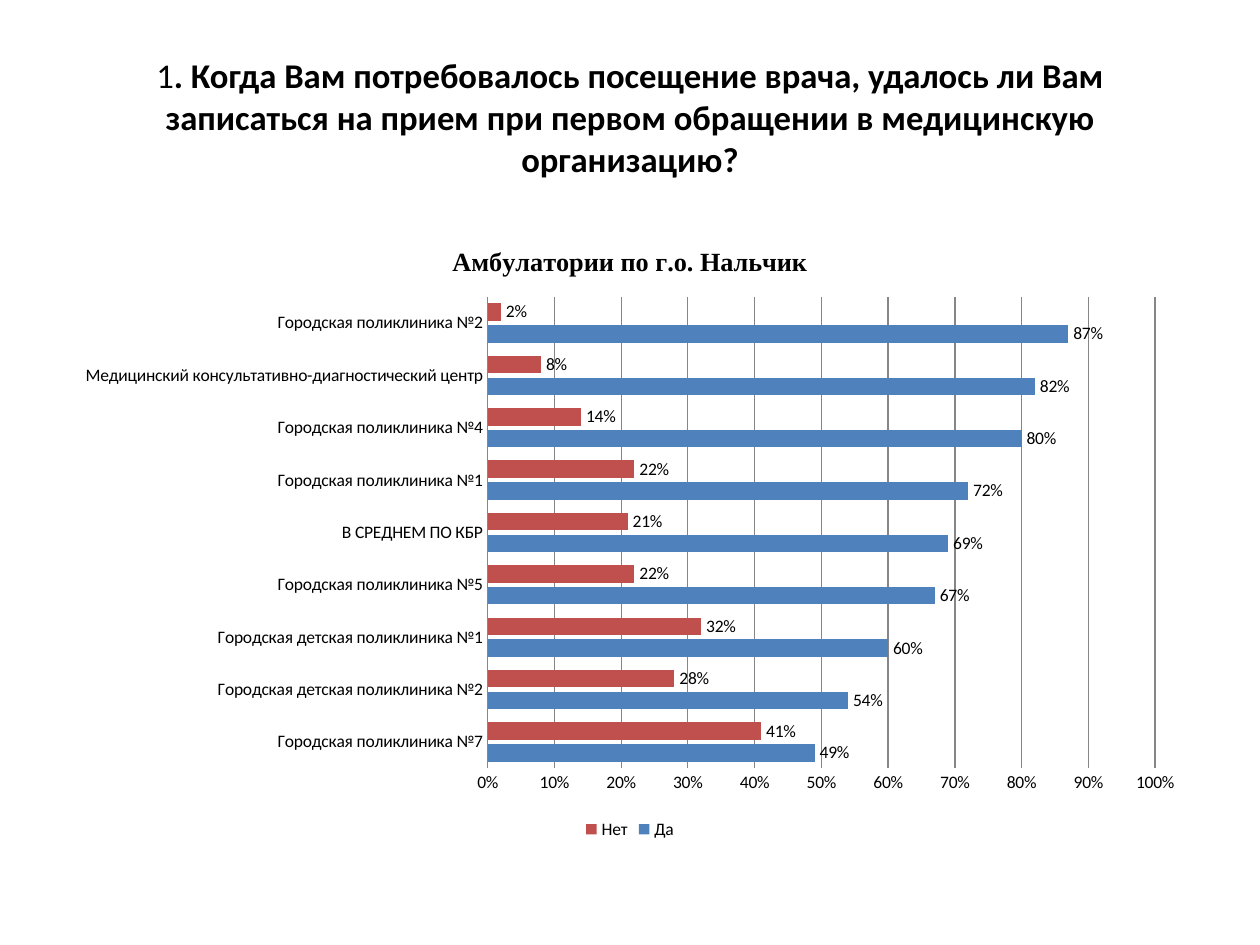
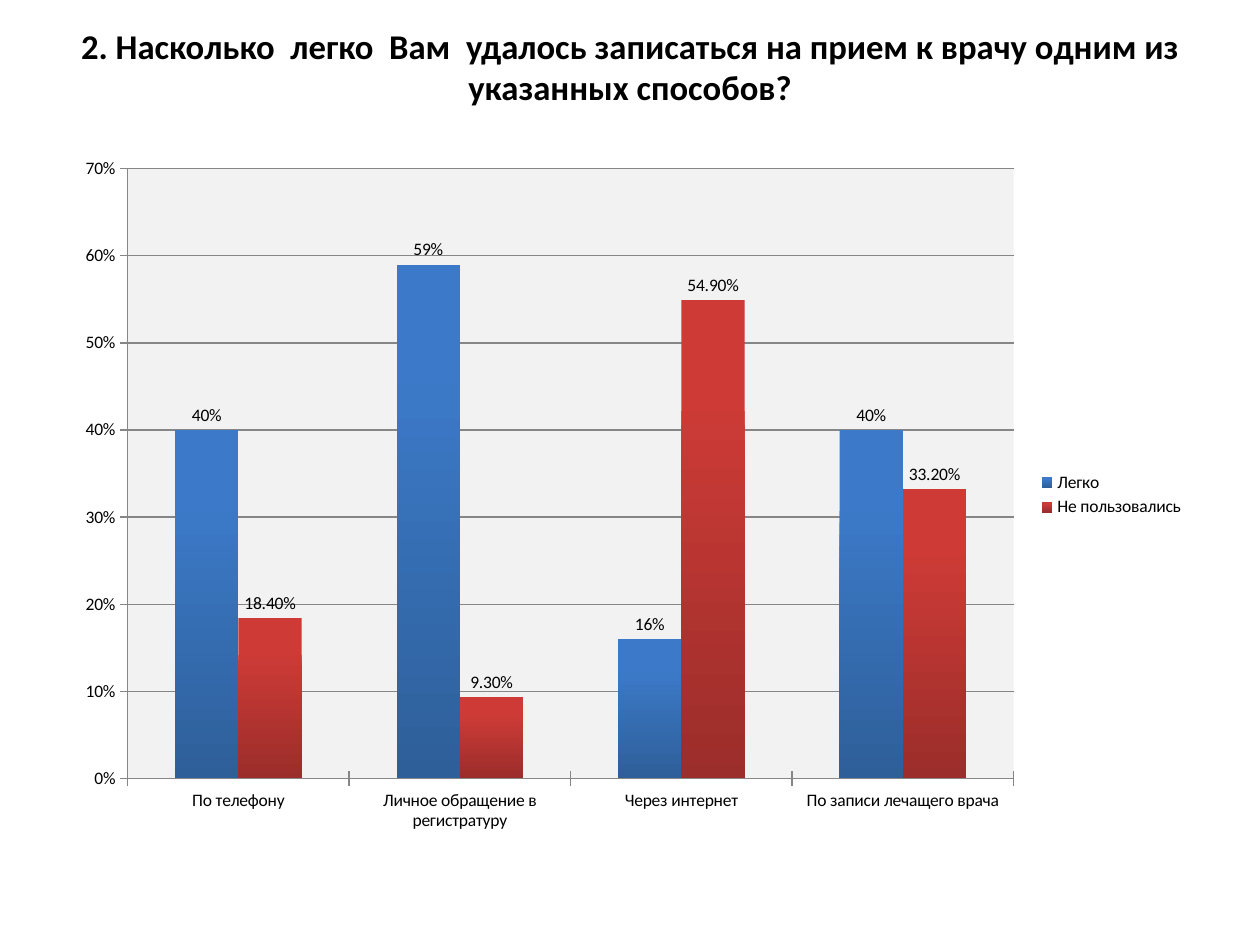
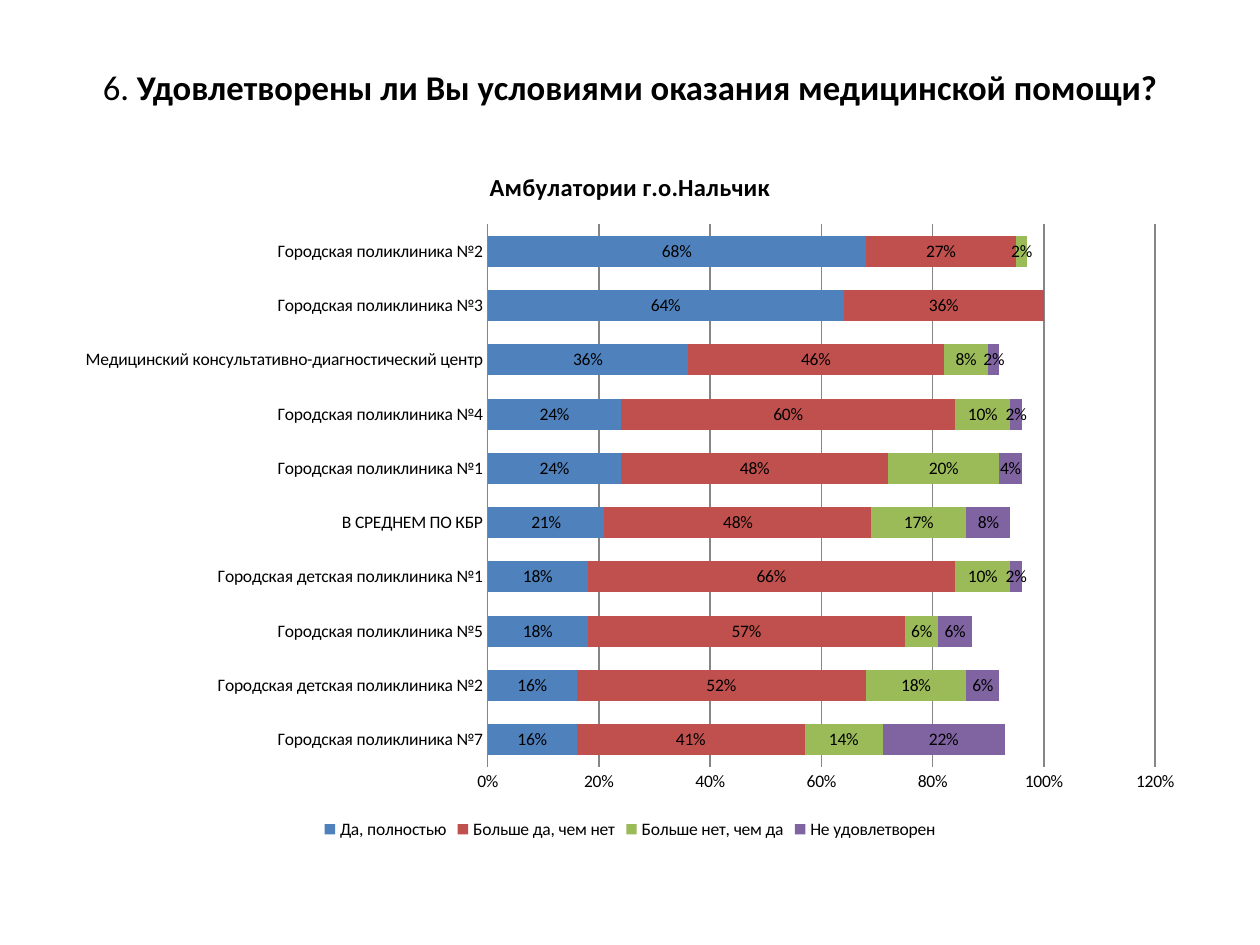
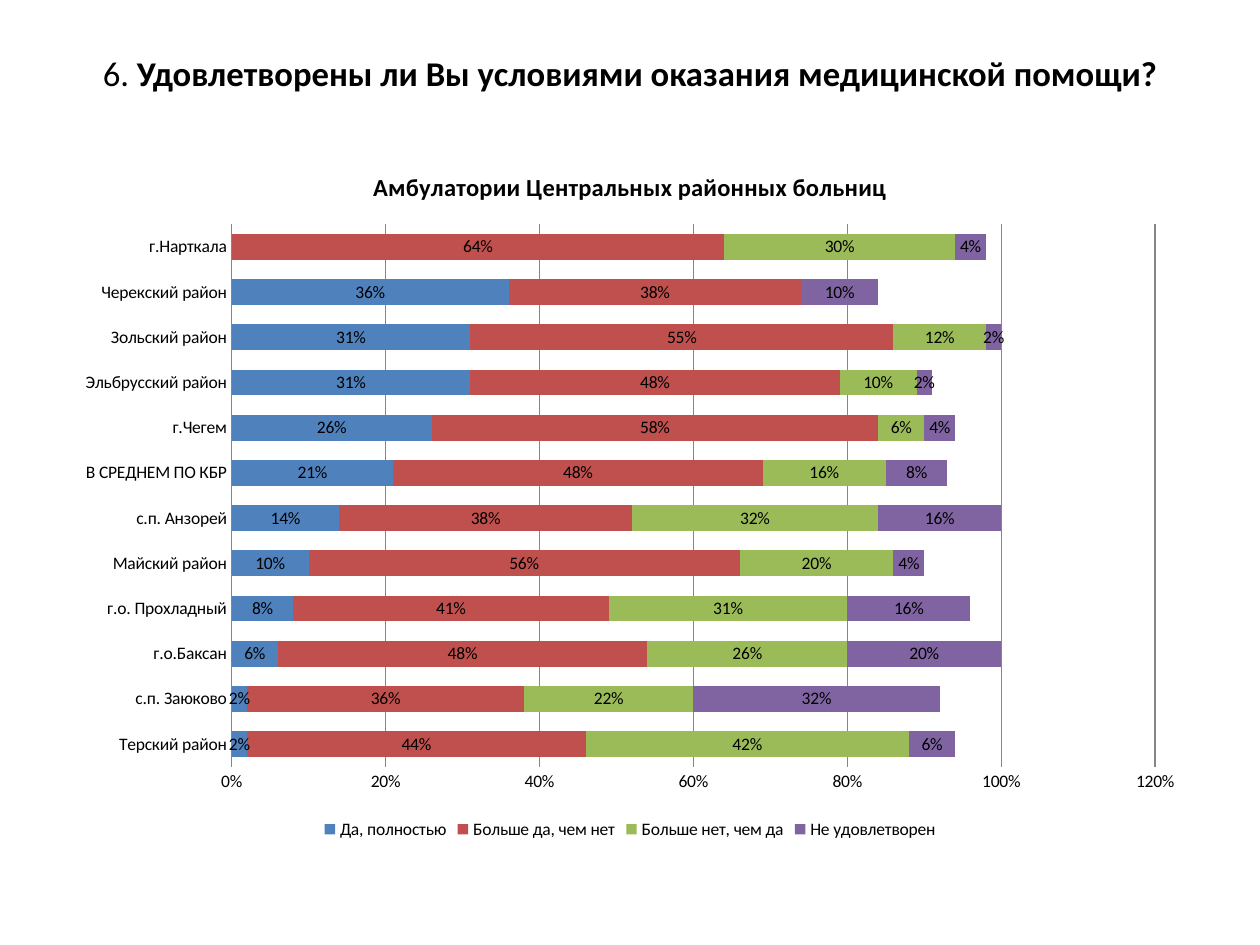
import dataclasses

import pptx
import pptx.chart.data
import pptx.dml.color
import pptx.enum.chart
import pptx.enum.text
import pptx.util

PX = 9144
TITLE_ONLY = 5
ChartType = pptx.enum.chart.XL_CHART_TYPE
LabelPlace = pptx.enum.chart.XL_LABEL_POSITION
LegendPlace = pptx.enum.chart.XL_LEGEND_POSITION
Tick = pptx.enum.chart.XL_TICK_MARK


@dataclasses.dataclass(frozen=True)
class Theme:
    font: str = "Calibri"
    serif: str = "Times New Roman"
    title_size: float = 19.8
    chart_size: float = 10
    heading_size: float = 14
    large_heading_size: float = 15
    text: str = "000000"
    background: str = "FFFFFF"
    rule: str = "868686"
    plot_fill: str = "F2F2F2"
    series: tuple = ("4F81BD", "C0504D", "9BBB59", "8064A2")
    gradients: tuple = (("3C7AC9", "2E5F99"), ("CE3B37", "9B2D2A"))


THEME = Theme()
AVERAGE = "В СРЕДНЕМ ПО КБР"
CENTRE = "Медицинский консультативно-диагностический центр"
CONDITIONS = [("6. ", False),
              ("Удовлетворены ли Вы условиями оказания медицинской помощи?", True)]
ANSWERS = ("Да, полностью", "Больше да, чем нет", "Больше нет, чем да", "Не удовлетворен")


def clinic(number):
    return f"Городская поликлиника №{number}"


def child_clinic(number):
    return f"Городская детская поликлиника №{number}"


def rgb(value):
    return pptx.dml.color.RGBColor.from_string(value)


def style_font(font, size, bold=False, name=THEME.font):
    font.name = name
    font.size = pptx.util.Pt(size)
    font.bold = bold
    font.color.rgb = rgb(THEME.text)


def place(box, left, top, width, height):
    box.left, box.top, box.width, box.height = (
        pptx.util.Emu(length * PX) for length in (left, top, width, height))


def add_page(deck, title_spans, title_top, title_height, bottom_inset=5):
    page = deck.slides.add_slide(deck.slide_layouts[TITLE_ONLY])
    page.background.fill.solid()
    page.background.fill.fore_color.rgb = rgb(THEME.background)
    box = page.shapes.title
    place(box, 50, title_top, 900, title_height)
    frame = box.text_frame
    frame.word_wrap = True
    frame.auto_size = pptx.enum.text.MSO_AUTO_SIZE.NONE
    frame.vertical_anchor = pptx.enum.text.MSO_ANCHOR.MIDDLE
    frame.margin_bottom = pptx.util.Emu(bottom_inset * PX)
    para = frame.paragraphs[0]
    para.alignment = pptx.enum.text.PP_ALIGN.CENTER
    for text, bold in title_spans:
        span = para.add_run()
        span.text = text
        style_font(span.font, THEME.title_size, bold)
    return page


def add_chart(page, kind, top, categories, series, label_place):
    data = pptx.chart.data.CategoryChartData()
    data.categories = categories
    for name, percents in series:
        data.add_series(name, [None if value is None else round(value / 100, 3)
                               for value in percents])
    left, width, bottom = 50, 900, 670
    chart = page.shapes.add_chart(
        kind, *(pptx.util.Emu(length * PX) for length in (left, top, width, bottom - top)),
        data).chart
    style_font(chart.font, THEME.chart_size)
    chart.has_title = False
    chart.plots[0].vary_by_categories = False
    for item, colour in zip(chart.plots[0].series, THEME.series):
        item.format.fill.solid()
        item.format.fill.fore_color.rgb = rgb(colour)
        labels = item.data_labels
        labels.show_value = True
        labels.position = label_place
        labels.number_format = "0%"
        labels.number_format_is_linked = False
        style_font(labels.font, THEME.chart_size)
    return chart


def style_axes(chart, maximum, step, tick):
    value_axis = chart.value_axis
    value_axis.minimum_scale = 0
    value_axis.maximum_scale = maximum
    value_axis.major_unit = step
    value_axis.has_major_gridlines = True
    value_axis.major_gridlines.format.line.color.rgb = rgb(THEME.rule)
    value_axis.tick_labels.number_format = "0%"
    value_axis.tick_labels.number_format_is_linked = False
    for axis in (chart.category_axis, value_axis):
        axis.major_tick_mark = tick
        axis.minor_tick_mark = Tick.NONE
        axis.format.line.color.rgb = rgb(THEME.rule)
        style_font(axis.tick_labels.font, THEME.chart_size)


def add_legend(chart, position):
    chart.has_legend = True
    chart.legend.position = position
    chart.legend.include_in_layout = False
    style_font(chart.legend.font, THEME.chart_size)


def add_heading(chart, text, size, name):
    chart.has_title = True
    span = chart.chart_title.text_frame.paragraphs[0].add_run()
    span.text = text
    style_font(span.font, size, True, name)


def add_bars(page, kind, top, heading, categories, series, maximum, step,
             size=THEME.heading_size, name=THEME.font):
    stacked = kind == ChartType.BAR_STACKED
    label_place = LabelPlace.CENTER if stacked else LabelPlace.OUTSIDE_END
    chart = add_chart(page, kind, top, categories, series, label_place)
    chart.plots[0].gap_width = 75
    chart.plots[0].overlap = 100 if stacked else -25
    style_axes(chart, maximum, step, Tick.NONE)
    chart.value_axis.format.line.fill.background()
    add_legend(chart, LegendPlace.BOTTOM)
    add_heading(chart, heading, size, name)


def shade_columns(chart):
    for item, colours in zip(chart.plots[0].series, THEME.gradients):
        fill = item.format.fill
        fill.gradient()
        fill.gradient_angle = 270
        for stop, colour, position in zip(fill.gradient_stops, colours, (0.2, 1)):
            stop.color.rgb = rgb(colour)
            stop.position = position


def fill_plot(chart, colour):
    plot_area = chart.plots[0]._element.getparent()
    properties = pptx.oxml.parse_xml(
        '<c:spPr xmlns:c="http://schemas.openxmlformats.org/drawingml/2006/chart" '
        'xmlns:a="http://schemas.openxmlformats.org/drawingml/2006/main">'
        f'<a:solidFill><a:srgbClr val="{colour}"/></a:solidFill></c:spPr>')
    plot_area.append(properties)


def add_first_visit(deck):
    page = add_page(deck, [
        ("1", False),
        (". Когда Вам потребовалось посещение врача, удалось ли Вам записаться на прием "
         "при первом обращении в медицинскую организацию?", True)], 30, 125)
    categories = [clinic(7), child_clinic(2), child_clinic(1), clinic(5), AVERAGE,
                  clinic(1), clinic(4), CENTRE, clinic(2)]
    series = [("Да", (49, 54, 60, 67, 69, 72, 80, 82, 87)),
              ("Нет", (41, 28, 32, 22, 21, 22, 14, 8, 2))]
    add_bars(page, ChartType.BAR_CLUSTERED, 175, "Амбулатории по г.о. Нальчик",
             categories, series, 1, 0.1, THEME.large_heading_size, THEME.serif)


def add_booking_ways(deck):
    page = add_page(deck, [
        ("2. Насколько  легко  Вам  удалось записаться на прием к врачу одним из "
         "указанных способов?", True)], 13, 79)
    categories = ["По телефону", "Личное обращение в регистратуру", "Через интернет",
                  "По записи лечащего врача"]
    series = [("Легко", (40, 59, 16, 40)),
              ("Не пользовались", (18.4, 9.3, 54.9, 33.2))]
    chart = add_chart(page, ChartType.COLUMN_CLUSTERED, 115, categories, series,
                      LabelPlace.OUTSIDE_END)
    chart.plots[0].gap_width = 150
    chart.plots[0].overlap = 0
    chart.plots[0].series[1].data_labels.number_format = "0.00%"
    style_axes(chart, 0.7, 0.1, Tick.CROSS)
    add_legend(chart, LegendPlace.RIGHT)
    shade_columns(chart)
    fill_plot(chart, THEME.plot_fill)


def add_conditions(deck, title_height, bottom_inset, heading, categories, percents):
    page = add_page(deck, CONDITIONS, 30, title_height, bottom_inset)
    add_bars(page, ChartType.BAR_STACKED, 115, heading, categories,
             list(zip(ANSWERS, percents)), 1.2, 0.2)


def main():
    deck = pptx.Presentation()
    deck.slide_width = pptx.util.Emu(1000 * PX)
    deck.slide_height = pptx.util.Emu(750 * PX)
    add_first_visit(deck)
    add_booking_ways(deck)
    add_conditions(
        deck, 77, 5, "Амбулатории г.о.Нальчик",
        [clinic(7), child_clinic(2), clinic(5), child_clinic(1), AVERAGE,
         clinic(1), clinic(4), CENTRE, clinic(3), clinic(2)],
        [(16, 16, 18, 18, 21, 24, 24, 36, 64, 68),
         (41, 52, 57, 66, 48, 48, 60, 46, 36, 27),
         (14, 18, 6, 10, 17, 20, 10, 8, None, 2),
         (22, 6, 6, 2, 8, 4, 2, 2, None, None)])
    add_conditions(
        deck, 85, 34, "Амбулатории Центральных районных больниц",
        ["Терский район", "с.п. Заюково", "г.о.Баксан", "г.о. Прохладный",
         "Майский район", "с.п. Анзорей", AVERAGE, "г.Чегем", "Эльбрусский район",
         "Зольский район", "Черекский район", "г.Нарткала"],
        [(2, 2, 6, 8, 10, 14, 21, 26, 31, 31, 36, None),
         (44, 36, 48, 41, 56, 38, 48, 58, 48, 55, 38, 64),
         (42, 22, 26, 31, 20, 32, 16, 6, 10, 12, None, 30),
         (6, 32, 20, 16, 4, 16, 8, 4, 2, 2, 10, 4)])
    deck.save("out.pptx")


if __name__ == "__main__":
    main()
